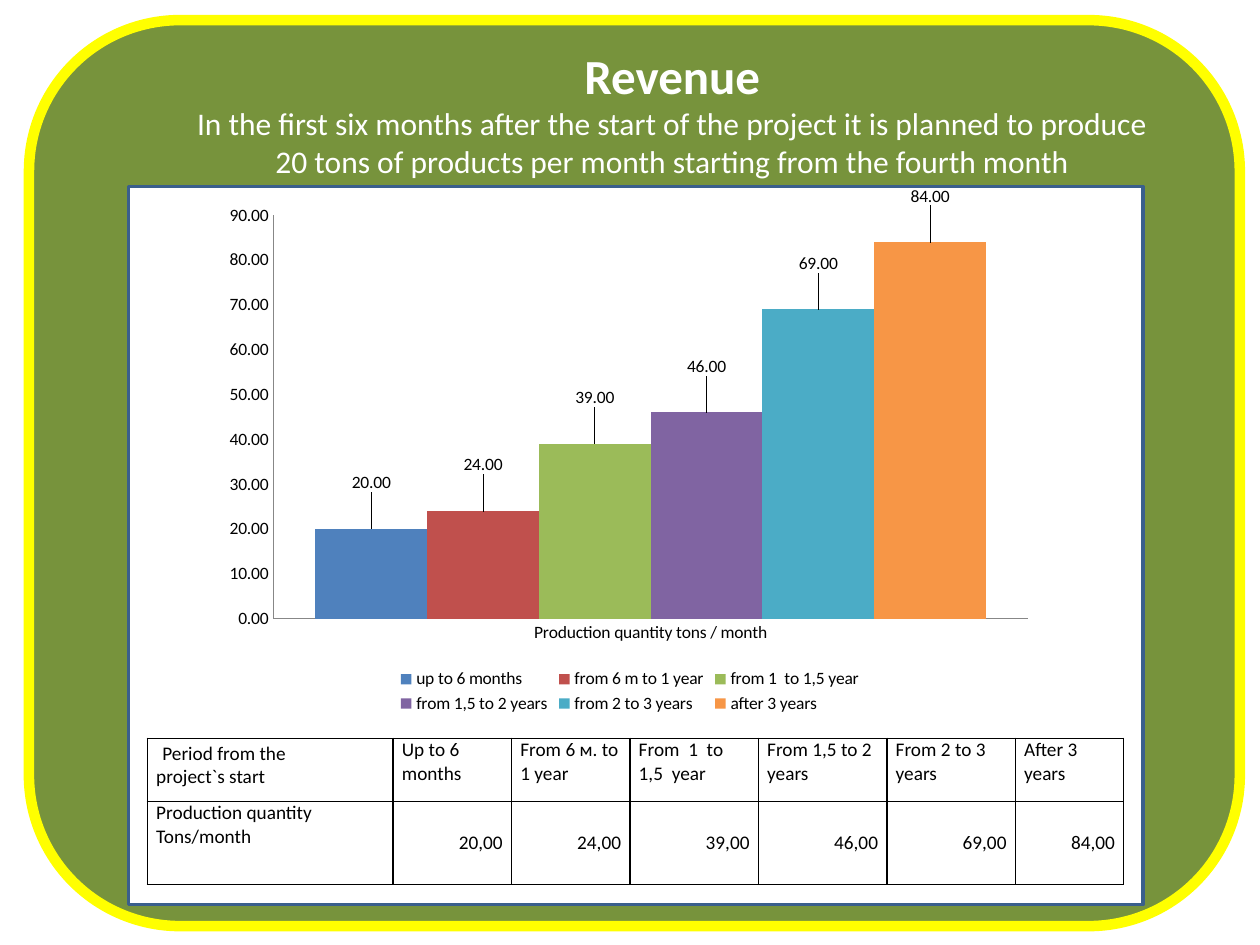
from lxml import etree
from pptx import Presentation
from pptx.chart.data import CategoryChartData
from pptx.dml.color import RGBColor
from pptx.enum.chart import XL_CHART_TYPE, XL_LEGEND_POSITION, XL_TICK_MARK
from pptx.enum.shapes import MSO_SHAPE
from pptx.enum.text import MSO_ANCHOR, MSO_AUTO_SIZE, PP_ALIGN
from pptx.oxml import parse_xml
from pptx.oxml.ns import nsdecls, qn
from pptx.util import Inches, Pt

COLUMN = XL_CHART_TYPE.COLUMN_CLUSTERED
BOTTOM = XL_LEGEND_POSITION.BOTTOM
NO_TICK = XL_TICK_MARK.NONE
RECT, ROUND = MSO_SHAPE.RECTANGLE, MSO_SHAPE.ROUNDED_RECTANGLE
TOP, MIDDLE = MSO_ANCHOR.TOP, MSO_ANCHOR.MIDDLE
GROW = MSO_AUTO_SIZE.SHAPE_TO_FIT_TEXT
LEFT, CENTER, RIGHT = PP_ALIGN.LEFT, PP_ALIGN.CENTER, PP_ALIGN.RIGHT

COLS, ROWS = 100, 75
WIDTH, HEIGHT = Inches(10), Inches(7.5)
SERIES = [
    ("up to 6 months", 20, "4F81BD"),
    ("from 6 m to 1 year", 24, "C0504D"),
    ("from 1  to 1,5 year", 39, "9BBB59"),
    ("from 1,5 to 2 years", 46, "8064A2"),
    ("from 2 to 3 years", 69, "4BACC6"),
    ("after 3 years", 84, "F79646"),
]
PERIODS = ["Up to 6 months", "From 6 м. to 1 year", "From  1  to 1,5  year",
           "From 1,5 to 2 years", "From 2 to 3 years", "After 3  years"]


def rgb(value):
    """Turn a hex string into a colour."""
    return RGBColor.from_string(value)


def write(tf, text, size=11, color="000000", font="Calibri", bold=False,
          align=LEFT, after=0, join=False):
    """Add a paragraph, or with join a run to the last paragraph."""
    p = tf.paragraphs[-1]
    if p.runs and not join:
        p = tf.add_paragraph()
    p.alignment, p.space_after = align, Pt(after)
    r = p.add_run()
    r.text = text
    r.font.size, r.font.name, r.font.bold = Pt(size), font, bold
    r.font.color.rgb = rgb(color)


def manual_layout(x, y, w=None, h=None):
    """Make a chart layout element from shares of the chart."""
    layout = parse_xml(f"<c:layout {nsdecls('c')}><c:manualLayout/></c:layout>")
    parts = [("x", x), ("y", y)]
    if w:
        parts = [("layoutTarget", "inner"), ("xMode", "edge"), ("yMode", "edge"),
                 *parts, ("w", w), ("h", h)]
    for tag, value in parts:
        etree.SubElement(layout[0], qn(f"c:{tag}")).set("val", str(value))
    return layout


class Deck:
    """Hold the style and the current slide."""

    def __init__(self):
        """Start a presentation with one blank slide."""
        self.prs = Presentation()
        self.prs.slide_width, self.prs.slide_height = WIDTH, HEIGHT
        self.s = self.prs.slides.add_slide(self.prs.slide_layouts[6])

    def box(self, x, y, w, h):
        """Turn grid columns and rows into lengths."""
        return (int(WIDTH * x / COLS), int(HEIGHT * y / ROWS),
                int(WIDTH * w / COLS), int(HEIGHT * h / ROWS))

    def panel(self, kind, at, fill, line, width):
        """Add a filled and outlined shape."""
        sp = self.s.shapes.add_shape(kind, *self.box(*at))
        sp.shadow.inherit = False
        sp.fill.solid()
        sp.fill.fore_color.rgb = rgb(fill)
        sp.line.color.rgb = rgb(line)
        sp.line.width = Pt(width)

    def heading(self, at, title, lines):
        """Add a bold title with lines below it."""
        tf = self.s.shapes.add_textbox(*self.box(*at)).text_frame
        tf.word_wrap, tf.auto_size = False, GROW
        write(tf, title, size=28, color="FFFFFF", bold=True, align=CENTER)
        for line in lines:
            write(tf, line, size=18, color="FFFFFF", align=CENTER)

    def chart(self, at, category, series):
        """Add a column chart with raised value labels."""
        data = CategoryChartData(number_format="0.00")
        data.categories = [category]
        for name, value, _ in series:
            data.add_series(name, [value])
        chart = self.s.shapes.add_chart(COLUMN, *self.box(*at), data).chart
        chart.has_title = False
        chart.font.size, chart.font.name = Pt(10), "Calibri"
        chart.font.color.rgb = rgb("000000")
        chart.has_legend = True
        chart.legend.position, chart.legend.include_in_layout = BOTTOM, False
        area = chart.plots[0]
        area.gap_width, area.overlap, area.vary_by_categories = 75, 0, False
        for ser, (_, _, color) in zip(area.series, series):
            ser.format.fill.solid()
            ser.format.fill.fore_color.rgb = rgb(color)
            labels = ser.data_labels
            labels.show_value = True
            labels.number_format, labels.number_format_is_linked = "0.00", False
            ser.points[0].data_label.font.size = Pt(10)
            idx = labels._element.find(qn("c:dLbl")).find(qn("c:idx"))
            idx.addnext(manual_layout(0, -0.06))
        for axis in (chart.category_axis, chart.value_axis):
            axis.major_tick_mark = axis.minor_tick_mark = NO_TICK
            axis.has_major_gridlines = False
            axis.format.line.color.rgb = rgb("878787")
        axis = chart.value_axis
        axis.minimum_scale, axis.maximum_scale, axis.major_unit = 0, 90, 10
        axis.tick_labels.number_format = "0.00"
        axis.tick_labels.number_format_is_linked = False
        plot = chart._chartSpace.chart.plotArea
        for old in plot.findall(qn("c:layout")):
            plot.remove(old)
        plot.insert(0, manual_layout(0.07, 0.04, 0.91, 0.77))

    def cell(self, cell, anchor=TOP):
        """Style a table cell and return its text frame."""
        cell.margin_left = cell.margin_right = Inches(0.07)
        cell.margin_top = cell.margin_bottom = 0
        cell.vertical_anchor = anchor
        tcPr = cell._tc.get_or_add_tcPr()
        for side in "LRTB":
            tcPr.append(parse_xml(
                f'<a:ln{side} {nsdecls("a")} w="12700"><a:solidFill>'
                f'<a:srgbClr val="000000"/></a:solidFill></a:ln{side}>'))
        cell.fill.background()
        return cell.text_frame

    def table(self, at, widths, heights, periods, values):
        """Add the table of quantities by period."""
        table = self.s.shapes.add_table(
            len(heights), len(widths), *self.box(*at)).table
        table.first_row = table.horz_banding = False
        for col, width in zip(table.columns, widths):
            col.width = int(WIDTH * width / COLS)
        for row, height in zip(table.rows, heights):
            row.height = int(HEIGHT * height / ROWS)
        tf = self.cell(table.cell(0, 0))
        write(tf, " ", size=14, font="Times New Roman")
        write(tf, "Period from the", join=True)
        write(tf, "project`s start")
        tf = self.cell(table.cell(1, 0))
        write(tf, "Production quantity")
        write(tf, "Tons/month")
        for i, (period, value) in enumerate(zip(periods, values), 1):
            write(self.cell(table.cell(0, i)), period)
            write(self.cell(table.cell(1, i), MIDDLE), f"{value},00",
                  align=RIGHT, after=6)


def main():
    """Build the revenue slide."""
    deck = Deck()
    deck.panel(ROUND, (2.3, 1.6, 96.1, 71.9), "77933C", "FFFF00", 6)
    deck.heading((13.3, 3.1, 80.1, 11.8), "Revenue", [
        "In the first six months after the start of the project it is planned to produce",
        "20 tons of products per month starting from the fourth month"])
    deck.panel(RECT, (10.2, 14.8, 80.5, 57), "FFFFFF", "3A5F8C", 2)
    deck.chart((17.1, 14.8, 65.8, 42.2), "Production quantity tons / month", SERIES)
    deck.table((11.7, 58.6, 77.3, 11.6), [19.5, 9.4, 9.4, 10.2, 10.2, 10.2, 8.6],
               [5, 6.6], PERIODS, [value for _, value, _ in SERIES])
    deck.prs.save("out.pptx")


if __name__ == "__main__":
    main()
